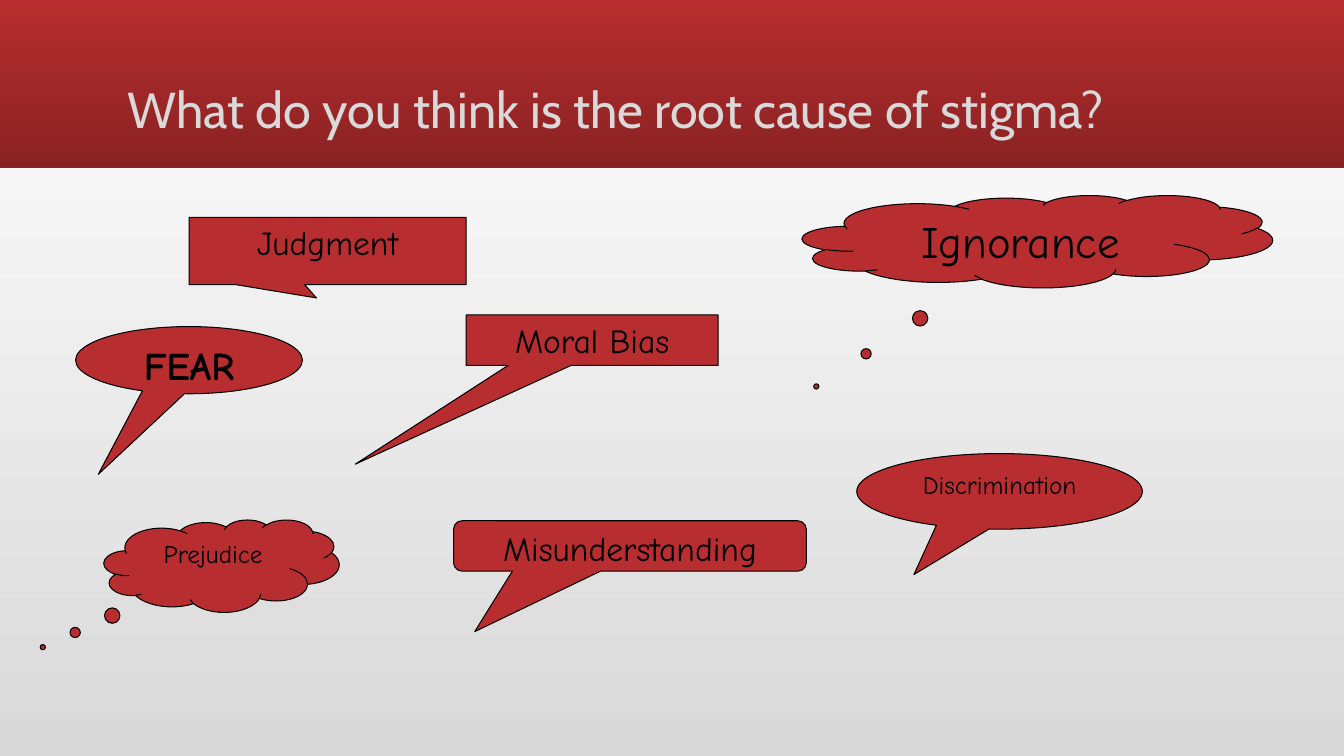
import dataclasses

import pptx
import pptx.dml.color
import pptx.enum.shapes
import pptx.enum.text
import pptx.util

PX = 9525
SHAPE = pptx.enum.shapes.MSO_SHAPE
ALIGN = pptx.enum.text.PP_ALIGN
ANCHOR = pptx.enum.text.MSO_ANCHOR


@dataclasses.dataclass(frozen=True)
class Theme:
    red: str = "B82D2F"
    dark_red: str = "8A2223"
    gray: str = "D9D9D9"
    white: str = "FFFFFF"
    black: str = "000000"
    title_font: str = "Cabin"
    callout_font: str = "Comic Neue"
    title: int = 36
    huge: int = 32
    large: int = 28
    medium: int = 24
    small: int = 18
    outline: float = 0.75


THEME = Theme()

CALLOUTS = [
    ("FEAR", SHAPE.OVAL_CALLOUT, (72, 311, 216, 64), (-0.4, 1.7), THEME.large, True),
    ("Ignorance", SHAPE.CLOUD_CALLOUT, (764, 186, 448, 88), (-0.47, 1.57), THEME.huge, False),
    ("Moral Bias", SHAPE.RECTANGULAR_CALLOUT, (444, 300, 240, 48), (-0.94, 2.46), THEME.medium, False),
    ("Misunderstanding", SHAPE.ROUNDED_RECTANGULAR_CALLOUT, (432, 496, 336, 48),
     (-0.44, 1.7, 0.17), THEME.medium, False),
    ("Judgment", SHAPE.RECTANGULAR_CALLOUT, (180, 207, 264, 64), (-0.04, 0.7), THEME.medium, False),
    ("Discrimination", SHAPE.OVAL_CALLOUT, (816, 432, 272, 72), (-0.3, 1.1), THEME.small, False),
    ("Prejudice", SHAPE.CLOUD_CALLOUT, (99, 495, 224, 88), (-0.76, 0.88), THEME.small, False),
]


def rgb(color):
    return pptx.dml.color.RGBColor.from_string(color)


def emu(box):
    return [pptx.util.Emu(v * PX) for v in box]


def fill_gradient(fill, colors, angle):
    fill.gradient()
    fill.gradient_angle = angle
    for stop, color, position in zip(fill.gradient_stops, colors, (0, 1)):
        stop.color.rgb = rgb(color)
        stop.position = position


def format_text(p, font, size, color, bold=False):
    for r in p.runs:
        r.font.name = font
        r.font.size = pptx.util.Pt(size)
        r.font.bold = bold
        r.font.color.rgb = rgb(color)


def add_header(s, text, box):
    x, y, w, h = box
    title = s.shapes.title
    band = s.shapes.add_shape(SHAPE.RECTANGLE, *emu(box))
    band.shadow.inherit = False
    band.line.fill.background()
    fill_gradient(band.fill, (THEME.red, THEME.dark_red), 270)
    title.element.addprevious(band.element)

    title.left, title.top, title.width, title.height = emu((x + 112, y + 11, w - 224, h - 21))
    tf = title.text_frame
    tf.text = text
    tf.word_wrap = True
    tf.auto_size = pptx.enum.text.MSO_AUTO_SIZE.NONE
    tf.vertical_anchor = ANCHOR.BOTTOM
    tf.margin_bottom = pptx.util.Emu(17 * PX)
    p = tf.paragraphs[0]
    p.alignment = ALIGN.LEFT
    p.line_spacing = 0.9
    format_text(p, THEME.title_font, THEME.title, THEME.gray)


def add_callout(s, text, kind, box, adjustments, size, bold):
    sp = s.shapes.add_shape(kind, *emu(box))
    sp.shadow.inherit = False
    for i, value in enumerate(adjustments):
        sp.adjustments[i] = value
    sp.fill.solid()
    sp.fill.fore_color.rgb = rgb(THEME.red)
    sp.line.color.rgb = rgb(THEME.black)
    sp.line.width = pptx.util.Pt(THEME.outline)
    tf = sp.text_frame
    tf.text = text
    tf.word_wrap = True
    tf.vertical_anchor = ANCHOR.TOP
    p = tf.paragraphs[0]
    p.alignment = ALIGN.CENTER
    format_text(p, THEME.callout_font, size, THEME.black, bold)


def main():
    prs = pptx.Presentation()
    prs.slide_width, prs.slide_height = emu((1280, 720))
    s = prs.slides.add_slide(prs.slide_layouts[5])
    fill_gradient(s.background.fill, (THEME.gray, THEME.white), 90)
    add_header(s, "What do you think is the root cause of stigma?", (0, 0, 1280, 160))
    for callout in CALLOUTS:
        add_callout(s, *callout)
    prs.save("out.pptx")


if __name__ == "__main__":
    main()
